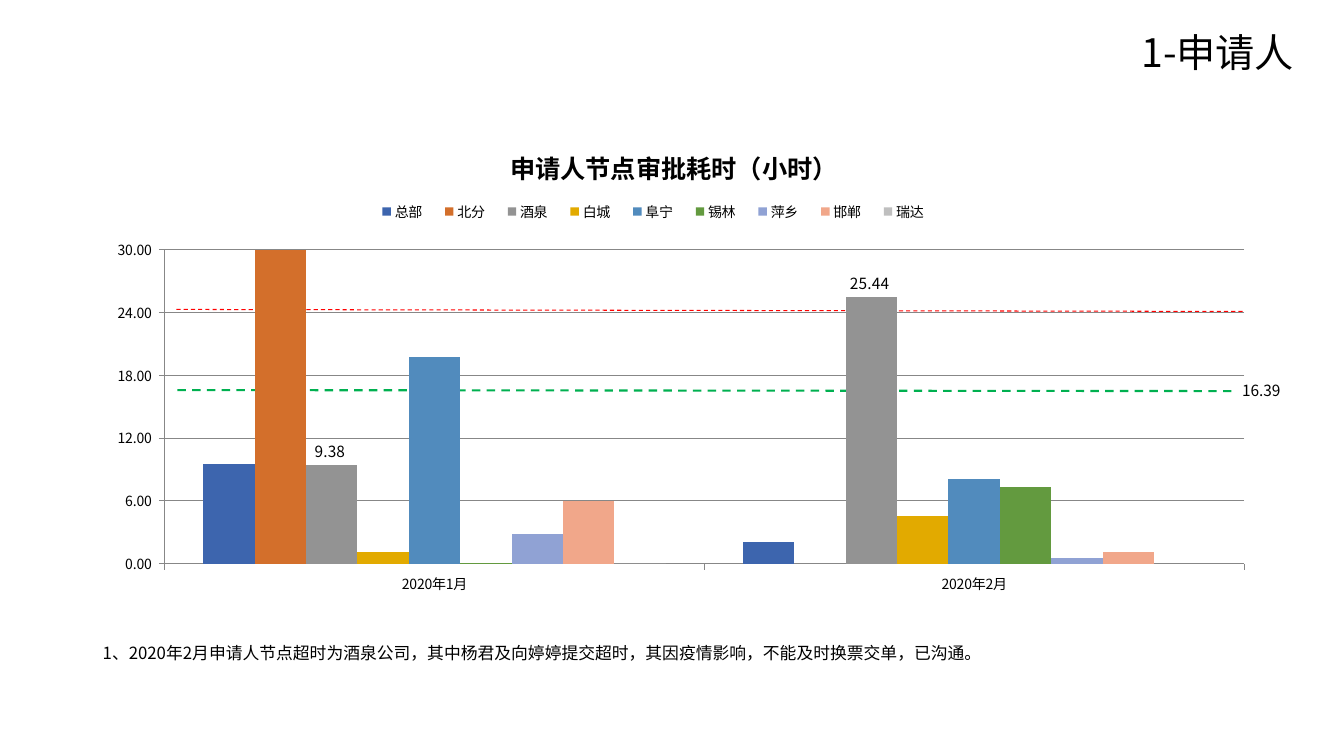
"""Build the slide on applicant approval time with its clustered column chart."""
from lxml import etree
from pptx import Presentation
from pptx.chart.data import CategoryChartData
from pptx.dml.color import RGBColor
from pptx.enum import chart as c, dml, shapes, text
from pptx.oxml import parse_xml
from pptx.oxml.ns import nsdecls, qn
from pptx.util import Inches, Pt

FONT = "Noto Sans CJK SC"
BLACK = RGBColor(0x00, 0x00, 0x00)
RED = RGBColor(0xFF, 0x00, 0x00)
GREEN = RGBColor(0x00, 0xB0, 0x50)
AXIS_GREY = RGBColor(0x87, 0x87, 0x87)

MONTHS = ["2020年1月", "2020年2月"]
BRANCHES = [
    ("总部", (9.5, 2.1), RGBColor(0x3D, 0x65, 0xAE)),
    ("北分", (72, None), RGBColor(0xD3, 0x6F, 0x2B)),
    ("酒泉", (9.38, 25.44), RGBColor(0x93, 0x93, 0x93)),
    ("白城", (1.1, 4.6), RGBColor(0xE2, 0xAA, 0x00)),
    ("阜宁", (19.7, 8.1), RGBColor(0x51, 0x8B, 0xBD)),
    ("锡林", (0.1, 7.3), RGBColor(0x63, 0x9A, 0x3F)),
    ("萍乡", (2.8, 0.5), RGBColor(0x90, 0xA2, 0xD4)),
    ("邯郸", (6, 1.1), RGBColor(0xF1, 0xA7, 0x8A)),
    ("瑞达", (0, None), RGBColor(0xBF, 0xBF, 0xBF)),
]
LABELLED_BRANCH = "酒泉"
NUMBER_FORMAT = "0.00_ "


def style_font(font, size, bold=False):
    """Give a font the slide's face, colour and a size."""
    font.name = FONT
    font.size = Pt(size)
    font.bold = bold
    font.color.rgb = BLACK


def write_line(frame, content, size, spacing=1.0):
    """Write one paragraph with a single run."""
    paragraph = frame.paragraphs[0]
    paragraph.alignment = text.PP_ALIGN.LEFT
    paragraph.line_spacing = spacing
    run = paragraph.add_run()
    run.text = content
    style_font(run.font, size)
    properties = run.font._element
    east_asian = etree.SubElement(properties, qn("a:ea"))
    east_asian.set("typeface", FONT)


def add_title(slide, content):
    """Place and fill the title placeholder."""
    title = slide.shapes.title
    title.left, title.top = Inches(11.22), Inches(0.28)
    title.width, title.height = Inches(1.89), Inches(0.53)
    frame = title.text_frame
    frame.auto_size = text.MSO_AUTO_SIZE.NONE
    frame.vertical_anchor = text.MSO_ANCHOR.MIDDLE
    write_line(frame, content, 28, 0.9)


def add_text(slide, box, content, size, spacing=1.0):
    """Add a wrapping text box."""
    frame = slide.shapes.add_textbox(*map(Inches, box)).text_frame
    frame.word_wrap = True
    write_line(frame, content, size, spacing)


def add_threshold(slide, start, end, color, width):
    """Add a dashed threshold line."""
    line = slide.shapes.add_connector(
        shapes.MSO_CONNECTOR.STRAIGHT, *map(Inches, start + end))
    line.line.color.rgb = color
    line.line.width = Pt(width)
    line.line.dash_style = dml.MSO_LINE.DASH
    etree.SubElement(line._element.spPr, qn("a:effectLst"))


def set_layout(element, x, y, width=None, height=None, inner=False):
    """Fix the place of a chart part as fractions of the chart."""
    for old in element.findall(qn("c:layout")):
        element.remove(old)
    values = [("layoutTarget", "inner")] if inner else []
    values += [("xMode", "edge"), ("yMode", "edge"), ("x", x), ("y", y)]
    if width:
        values += [("w", width), ("h", height)]
    layout = etree.Element(qn("c:layout"))
    manual = etree.SubElement(layout, qn("c:manualLayout"))
    for name, value in values:
        etree.SubElement(manual, qn(f"c:{name}")).set("val", str(value))
    overlay = element.find(qn("c:overlay"))
    if overlay is None:
        element.insert(0, layout)
    else:
        overlay.addprevious(layout)


def clear_background(chart):
    """Make the chart and plot areas see-through."""
    blank = (f'<c:spPr {nsdecls("c", "a")}><a:noFill/>'
             '<a:ln><a:noFill/></a:ln></c:spPr>')
    chart_element = chart._chartSpace.chart
    chart_element.addnext(parse_xml(blank))
    chart_element.plotArea.append(parse_xml(blank))


def style_axes(chart):
    """Format both axes and the gridlines."""
    for axis in (chart.category_axis, chart.value_axis):
        axis.major_tick_mark = c.XL_TICK_MARK.OUTSIDE
        axis.minor_tick_mark = c.XL_TICK_MARK.NONE
        axis.format.line.color.rgb = AXIS_GREY
        axis.format.line.width = Pt(0.75)
        style_font(axis.tick_labels.font, 10)
    values = chart.value_axis
    values.minimum_scale, values.maximum_scale, values.major_unit = 0, 30, 6
    values.tick_labels.number_format = NUMBER_FORMAT
    values.tick_labels.number_format_is_linked = False
    values.has_major_gridlines = True
    values.major_gridlines.format.line.color.rgb = AXIS_GREY
    values.major_gridlines.format.line.width = Pt(0.75)


def style_series(plot):
    """Colour the columns and label the late branch."""
    plot.gap_width = 150
    plot.overlap = 0
    plot.vary_by_categories = False
    for series, (name, _, color) in zip(plot.series, BRANCHES):
        series.format.fill.solid()
        series.format.fill.fore_color.rgb = color
        series.invert_if_negative = False
        if name == LABELLED_BRANCH:
            labels = series.data_labels
            labels.show_value = True
            labels.number_format = NUMBER_FORMAT
            labels.number_format_is_linked = False
            labels.position = c.XL_LABEL_POSITION.OUTSIDE_END
            style_font(labels.font, 11)


def add_approval_chart(slide, box, title):
    """Add the clustered columns of approval hours by branch."""
    data = CategoryChartData()
    data.categories = MONTHS
    for name, hours, _ in BRANCHES:
        data.add_series(name, hours)
    chart = slide.shapes.add_chart(
        c.XL_CHART_TYPE.COLUMN_CLUSTERED, *map(Inches, box), data).chart
    style_font(chart.font, 10)
    chart.has_title = True
    run = chart.chart_title.text_frame.paragraphs[0].add_run()
    run.text = title
    style_font(run.font, 18, bold=True)
    chart.has_legend = True
    chart.legend.position = c.XL_LEGEND_POSITION.TOP
    chart.legend.include_in_layout = False
    style_font(chart.legend.font, 10)
    style_axes(chart)
    style_series(chart.plots[0])
    clear_background(chart)
    set_layout(chart.chart_title._element, 0.35, 0.03)
    set_layout(chart.legend._element, 0.23, 0.14, 0.49, 0.06)
    set_layout(chart._chartSpace.chart.plotArea,
               0.061, 0.247, 0.915, 0.632, inner=True)


def main():
    """Build and save the presentation."""
    presentation = Presentation()
    presentation.slide_width = Inches(13.33)
    presentation.slide_height = Inches(7.5)
    slide = presentation.slides.add_slide(presentation.slide_layouts[5])
    add_title(slide, "1-申请人")
    add_text(slide, (0.92, 6.23, 11.59, 0.37),
             "1、2020年2月申请人节点超时为酒泉公司，其中杨君及向婷婷提交超时，"
             "其因疫情影响，不能及时换票交单，已沟通。", 12, 1.5)
    add_threshold(slide, (1.75, 3.07), (12.35, 3.09), RED, 0.75)
    add_threshold(slide, (1.76, 3.87), (12.22, 3.88), GREEN, 1.5)
    add_text(slide, (12.22, 3.73, 0.58, 0.29), "16.39", 11)
    add_approval_chart(slide, (0.92, 1.26, 11.7, 4.93), "申请人节点审批耗时（小时）")
    presentation.save("out.pptx")


if __name__ == "__main__":
    main()
